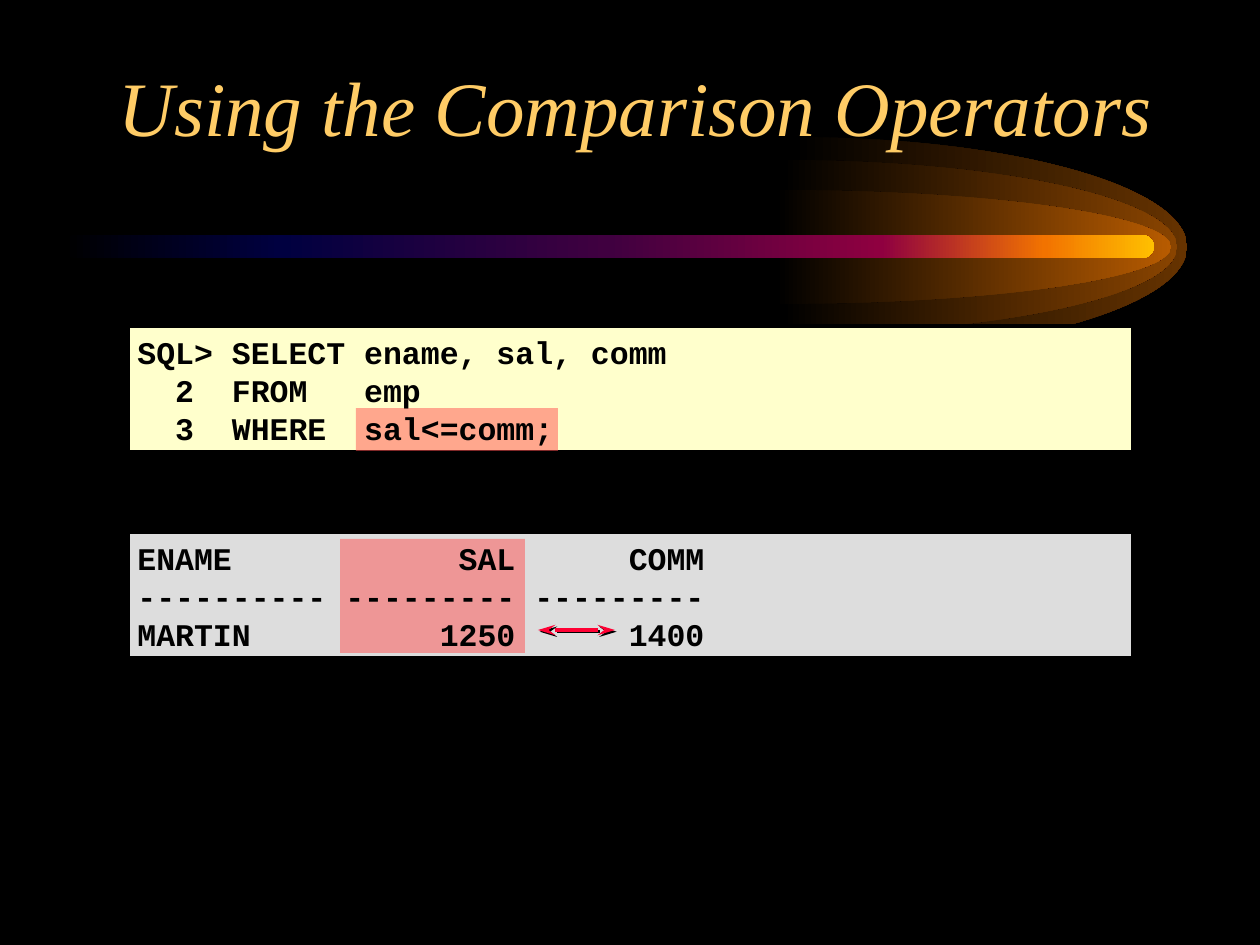
from lxml.etree import SubElement
from pptx import Presentation
from pptx.dml.color import RGBColor
from pptx.enum.shapes import MSO_CONNECTOR, MSO_SHAPE
from pptx.enum.text import MSO_ANCHOR, PP_ALIGN
from pptx.oxml.ns import qn
from pptx.util import Pt

SCALE = 914400 / 126  # EMU per px
THEME = {
    "background": "000000",
    "title": "FFCC66",
    "code": "000000",
    "panel_line": "000000",
    "query": "FFFFCC",
    "result": "DDDDDD",
    "highlight": "FF5050",
    "arrow": "FF0033",
    "shadow": "000000",
    "glows": ["663300", "894400", "B75B00"],
    "bar": [(0, "000000"), (20, "000040"), (50, "400040"),
            (75, "8F0040"), (90, "F27300"), (100, "FFBF00")],
    "title_font": "Times New Roman",
    "code_font": "Courier New",
    "title_size": Pt(44),
    "code_size": Pt(18),
}


def px(*lengths):
    """Turn px lengths into a list of EMU."""
    return [round(length * SCALE) for length in lengths]


def fill_gradient(shape, stops):
    """Fill a shape from left to right with (percent, colour) stops."""
    shape.shadow.inherit = False
    shape.line.fill.background()
    shape.fill.gradient()
    shape.fill.gradient_angle = 0
    stop_list = shape._element.spPr.find(qn("a:gradFill")).find(qn("a:gsLst"))
    for old_stop in list(stop_list):
        stop_list.remove(old_stop)
    for percent, colour in stops:
        stop = SubElement(stop_list, qn("a:gs"), pos=str(percent * 1000))
        SubElement(stop, qn("a:srgbClr"), val=colour)


presentation = Presentation()
presentation.slide_width, presentation.slide_height = px(1260, 945)
slide = presentation.slides.add_slide(presentation.slide_layouts[6])
slide.background.fill.solid()
slide.background.fill.fore_color.rgb = RGBColor.from_string(THEME["background"])
shapes = slide.shapes

# Comet: three half ellipses around the head of a tapering bar
GLOW_WIDTH, COMET_Y = 395, 247
ROUND = 0.55  # control point distance that bends a quarter curve into an ellipse
for left, radius, colour in zip((792, 782, 776), (110, 87, 57), THEME["glows"]):
    builder = shapes.build_freeform(left, COMET_Y - radius, scale=SCALE)
    builder.add_line_segments([(left + GLOW_WIDTH, COMET_Y), (left, COMET_Y + radius)])
    glow = builder.convert_to_shape()
    upper_controls = [(ROUND * GLOW_WIDTH, 0), (GLOW_WIDTH, (1 - ROUND) * radius)]
    lower_controls = [(GLOW_WIDTH, (1 + ROUND) * radius), (ROUND * GLOW_WIDTH, 2 * radius)]
    segments = list(glow._element.iter(qn("a:lnTo")))
    for segment, controls in zip(segments, (upper_controls, lower_controls)):
        curve = segment.getparent().makeelement(qn("a:cubicBezTo"))
        for x, y in controls:
            SubElement(curve, qn("a:pt"), x=str(round(x)), y=str(round(y)))
        curve.append(segment[0])
        segment.getparent().replace(segment, curve)
    fill_gradient(glow, [(0, THEME["background"]), (100, colour)])

bar = shapes.add_shape(MSO_SHAPE.ROUNDED_RECTANGLE, *px(63, 235, 1091, 23))
bar.adjustments[0] = 0.5
fill_gradient(bar, THEME["bar"])

# Panels
PANEL_LEFT, PANEL_WIDTH, PANEL_HEIGHT = 128, 1005, 126
panels = [
    (326, THEME["query"], (356, 408, 202, 43),
     ["SQL> SELECT ename, sal, comm",
      "  2  FROM   emp",
      "  3  WHERE  sal<=comm;"]),
    (532, THEME["result"], (340, 539, 185, 114),
     ["ENAME            SAL      COMM",
      "---------- --------- ---------",
      "MARTIN          1250      1400"]),
]
for top, colour, highlight_box, lines in panels:
    panel = shapes.add_shape(MSO_SHAPE.RECTANGLE,
                             *px(PANEL_LEFT, top, PANEL_WIDTH, PANEL_HEIGHT))
    panel.shadow.inherit = False
    panel.fill.solid()
    panel.fill.fore_color.rgb = RGBColor.from_string(colour)
    panel.line.color.rgb = RGBColor.from_string(THEME["panel_line"])
    panel.line.width = Pt(2)

    highlight = shapes.add_shape(MSO_SHAPE.RECTANGLE, *px(*highlight_box))
    highlight.shadow.inherit = False
    highlight.line.fill.background()
    highlight.fill.solid()
    highlight.fill.fore_color.rgb = RGBColor.from_string(THEME["highlight"])
    highlight_colour = highlight._element.spPr.find(qn("a:solidFill"))[0]
    SubElement(highlight_colour, qn("a:alpha"), val="50000")

    code = shapes.add_textbox(*px(PANEL_LEFT - 3, top - 1, 1008, 130)).text_frame
    code.word_wrap = True
    code.vertical_anchor = MSO_ANCHOR.MIDDLE
    code.text = "\n".join(lines)
    for paragraph in code.paragraphs:
        paragraph.font.name = THEME["code_font"]
        paragraph.font.size = THEME["code_size"]
        paragraph.font.bold = True
        paragraph.font.color.rgb = RGBColor.from_string(THEME["code"])

# Title
title = shapes.add_textbox(*px(94, 53, 1071, 157)).text_frame
title.word_wrap = True
title.text = "Using the Comparison Operators"
paragraph = title.paragraphs[0]
paragraph.alignment = PP_ALIGN.RIGHT
paragraph.font.name = THEME["title_font"]
paragraph.font.size = THEME["title_size"]
paragraph.font.italic = True
paragraph.font.color.rgb = RGBColor.from_string(THEME["title"])

# Arrow between the compared values
arrow = shapes.add_connector(MSO_CONNECTOR.STRAIGHT, *px(538, 630, 615, 630))
arrow.line.color.rgb = RGBColor.from_string(THEME["arrow"])
arrow.line.width = Pt(2)
arrow_line = arrow.line._get_or_add_ln()
for end in ("a:headEnd", "a:tailEnd"):
    SubElement(arrow_line, qn(end), type="stealth", w="med", len="lg")
effects = SubElement(arrow._element.spPr, qn("a:effectLst"))
shadow = SubElement(effects, qn("a:outerShdw"), dist=str(Pt(1.4)), dir="2700000")
SubElement(shadow, qn("a:srgbClr"), val=THEME["shadow"])

presentation.save("out.pptx")
